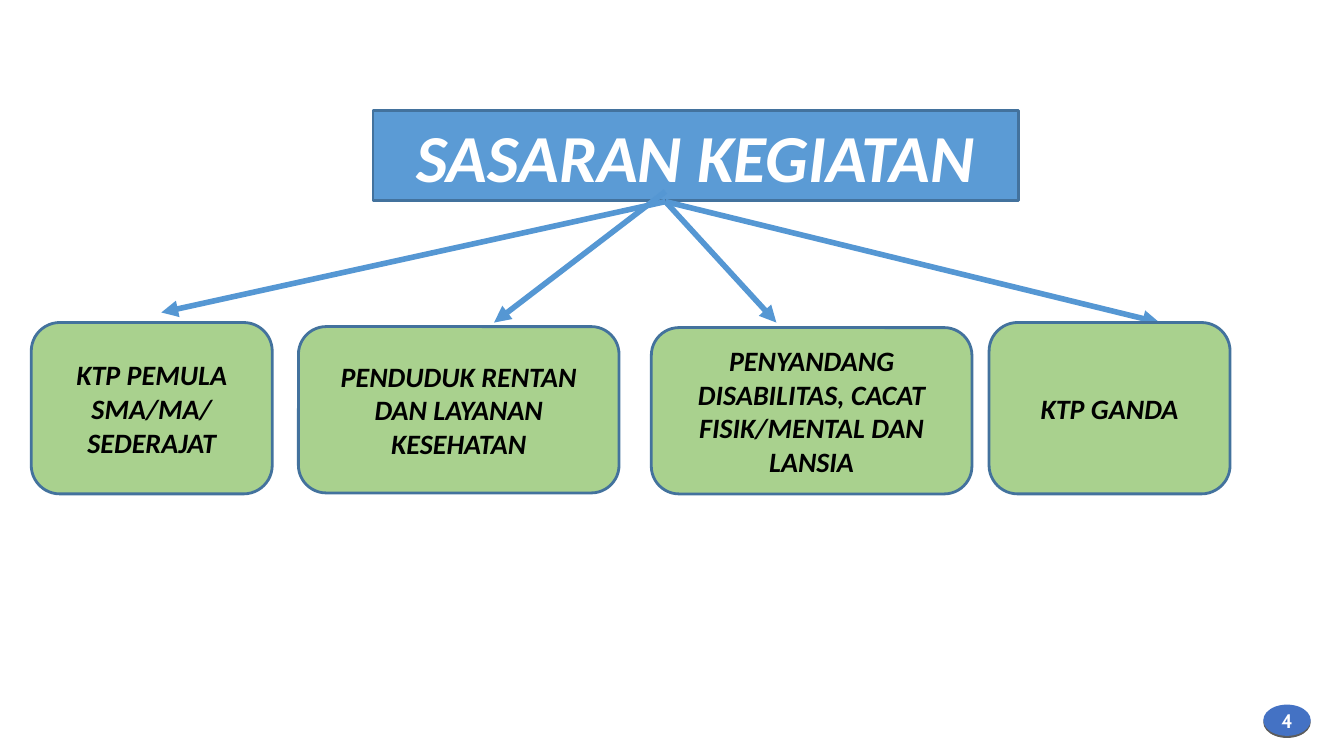
from lxml import etree
from pptx import Presentation
from pptx.dml.color import RGBColor
from pptx.enum.shapes import MSO_CONNECTOR, MSO_SHAPE
from pptx.enum.text import MSO_ANCHOR, MSO_AUTO_SIZE, PP_ALIGN
from pptx.oxml import parse_xml
from pptx.oxml.ns import nsdecls, qn
from pptx.util import Inches, Pt

COLORS = {
    "title": "5B9BD5",
    "target": "A9D18E",
    "border": "43729D",
    "arrow": "5597D3",
    "badge": "4472C4",
    "light": "FFFFFF",
    "dark": "000000",
}

# left, top, width, height, paragraphs
TARGETS = [
    (0.31, 3.2, 2.39, 1.7, "KTP PEMULA\nSMA/MA/SEDERAJAT"),
    (2.96, 3.24, 3.18, 1.65, "PENDUDUK RENTAN DAN LAYANAN KESEHATAN"),
    (6.46, 3.25, 3.18, 1.65,
     "PENYANDANG DISABILITAS, CACAT FISIK/MENTAL DAN LANSIA"),
    (9.81, 3.2, 2.39, 1.7, "KTP GANDA"),
]

# start y, end x, end y; every arrow starts at the same x
ARROW_START_X = 6.6
ARROWS = [(2, 1.6, 3.1), (1.9, 4.9, 3.2), (2, 7.7, 3.2), (2, 11.5, 3.2)]


def rgb(name):
    return RGBColor.from_string(COLORS[name])


def paint(shape, fill, border=None):
    shape.fill.solid()
    shape.fill.fore_color.rgb = rgb(fill)
    if border:
        shape.line.color.rgb = rgb(border)
        shape.line.width = Pt(2)
    else:
        shape.line.fill.background()


def write(shape, text, size, color, font="Calibri", italic=True, wrap=True):
    frame = shape.text_frame
    frame.text = text
    frame.word_wrap = wrap
    frame.auto_size = MSO_AUTO_SIZE.NONE
    frame.vertical_anchor = MSO_ANCHOR.MIDDLE
    for para in frame.paragraphs:
        para.alignment = PP_ALIGN.CENTER
        for span in para.runs:
            span.font.name = font
            span.font.size = Pt(size)
            span.font.bold = True
            span.font.italic = italic
            span.font.color.rgb = rgb(color)


def add_title(page, text):
    title = page.shapes.title
    title.left, title.top = Inches(3.7), Inches(1.1)
    title.width, title.height = Inches(6.4), Inches(0.89)
    # Give the title placeholder a rounded outline
    title._element.spPr.append(parse_xml(
        f'<a:prstGeom {nsdecls("a")} prst="roundRect"><a:avLst/></a:prstGeom>'))
    paint(title, "title", "border")
    write(title, text, 48, "light")


def add_target(page, left, top, width, height, text):
    box = page.shapes.add_shape(
        MSO_SHAPE.ROUNDED_RECTANGLE,
        Inches(left), Inches(top), Inches(width), Inches(height))
    box.shadow.inherit = False
    paint(box, "target", "border")
    write(box, text, 20, "dark")


def add_arrow(page, start_y, end_x, end_y):
    arrow = page.shapes.add_connector(
        MSO_CONNECTOR.STRAIGHT, Inches(ARROW_START_X), Inches(start_y),
        Inches(end_x), Inches(end_y))
    arrow.line.color.rgb = rgb("arrow")
    arrow.line.width = Pt(4)
    etree.SubElement(arrow.line._get_or_add_ln(), qn("a:tailEnd"), type="triangle")
    etree.SubElement(arrow._element.spPr, qn("a:effectLst"))


def add_page_badge(page, number):
    badge = page.shapes.add_shape(
        MSO_SHAPE.OVAL, Inches(12.53), Inches(6.99), Inches(0.47), Inches(0.31))
    badge.shadow.inherit = False
    paint(badge, "badge")
    write(badge, number, 14, "light", font="Cabin", italic=False, wrap=False)
    # Thin shadow straight below the badge
    effects = badge._element.spPr.find(qn("a:effectLst"))
    effects.append(parse_xml(
        f'<a:outerShdw {nsdecls("a")} dist="{Pt(1.5)}" dir="5400000" rotWithShape="0">'
        f'<a:srgbClr val="{COLORS["dark"]}"><a:alpha val="63000"/></a:srgbClr>'
        '</a:outerShdw>'))


def main():
    deck = Presentation()
    deck.slide_width, deck.slide_height = Inches(13.33), Inches(7.5)
    page = deck.slides.add_slide(deck.slide_layouts.get_by_name("Title Only"))

    # Heading and the arrows that fan out from it
    add_title(page, "SASARAN KEGIATAN")
    for arrow in ARROWS:
        add_arrow(page, *arrow)

    # Target groups
    for target in TARGETS:
        add_target(page, *target)

    # Page number
    add_page_badge(page, "4")
    deck.save("out.pptx")


if __name__ == "__main__":
    main()
